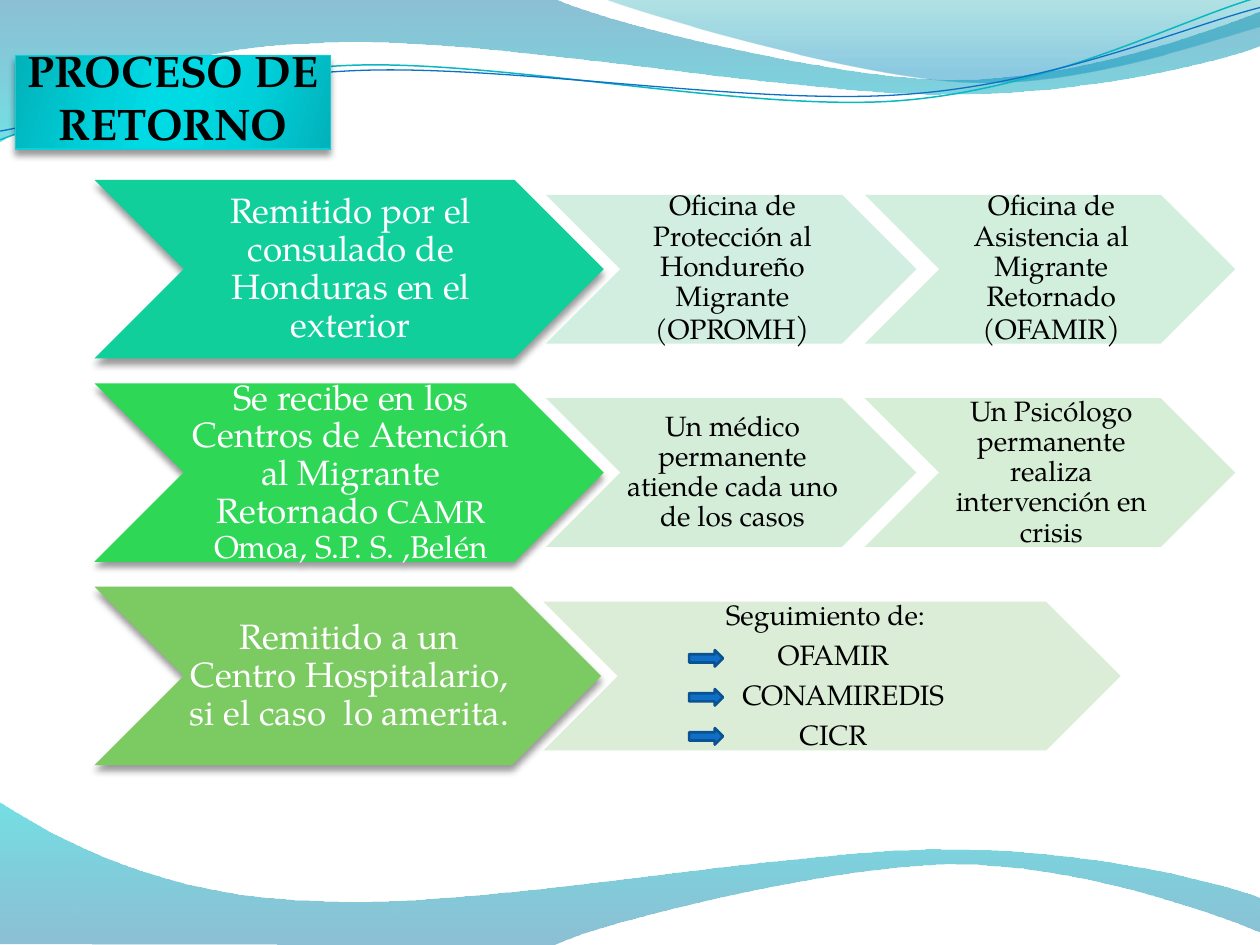
from lxml import etree
from pptx import Presentation
from pptx.dml.color import RGBColor
from pptx.enum import shapes, text
from pptx.oxml import ns
from pptx.util import Pt

FONT = "TeX Gyre Pagella"
COLORS = {
    "white": "FFFFFF", "black": "000000",
    "deep": "0074A1", "aqua": "00C6CF", "teal": "00A1A9", "sky": "008BBF",
    "thin_teal": "0AB8BF", "thin_blue": "0F6FC6", "arrow_edge": "0B5292",
    "title_edge": "0BD0D9", "title_dark": "01B2BA", "title_mid": "00D0DA", "title_light": "00DAE4",
    "mint": "10CF9B", "green": "2FD757", "olive": "7CCA62",
    "mint_1": "CCEDDE", "mint_2": "CEEDD9",
    "green_1": "D0ECD5", "green_2": "D2ECD2", "olive_1": "D8ECD3",
}
WIDTH, HEIGHT = 720, 540
MIRROR = 539.3
LEAD_HEIGHT, STEP_HEIGHT, ROW_PITCH = 102, 85, 116.25
LEAD_OVERLAP, STEP_OVERLAP = 33, 29.5

# Outlines in points: a pair is a straight segment, six numbers are a cubic curve.
WAVE = [(0, 0), (316.8, -0.7), (342.7, 12.2, 478.1, 45.4, 545.8, 45.4),
        (614.2, 45.4, 689.8, 18.7, 720, 6.5), (720.7, 25.9),
        (707.8, 31.7, 626.4, 54.7, 537.1, 54), (447.8, 54, 275, 20.2, 185, 24.5),
        (92.9, 25.9, 33.1, 59.8, -0.7, 81.4)]
CREST = [(344.9, -0.7), (366.5, 7.9, 491, 44.6, 553.7, 46.8),
         (616.3, 49.7, 691.9, 23, 720, 15.1), (720, 0)]
TEAL_LINE = [(0, 79.9), (34.6, 67, 113.8, 41, 199.4, 37.4),
             (284.4, 33.8, 427, 64.1, 513.4, 57.6), (599.8, 51.1, 675.4, 10.8, 718.6, -1.4)]
BLUE_LINE = [(0, 74.9), (33.8, 69.1, 118.1, 43.9, 203.8, 40.3),
             (290.2, 36.7, 429.8, 60.5, 516.2, 54), (601.9, 48.2, 677.5, 15.1, 720, 4.3)]

# Each row: widths of lead and steps, then (colour, paragraphs of (words, size) spans).
ROWS = [
    (291, 211.7, [
        ("mint", [[("Remitido por el consulado de Honduras en el exterior", 20)]]),
        ("mint_1", [[("Oficina de Protección al Hondureño Migrante (OPROMH", 16), (")", 18)]]),
        ("mint_2", [[("Oficina de Asistencia al Migrante Retornado (OFAMIR", 16), (")", 18)]])]),
    (291, 211.7, [
        ("green", [[("Se recibe en los Centros de Atención al Migrante Retornado ", 20),
                    ("CAMR Omoa, S.P. S. ,Belén", 18)]]),
        ("green_1", [[("Un médico permanente atiende cada uno de los casos", 16)]]),
        ("green_2", [[("Un Psicólogo permanente realiza intervención en crisis", 16)]])]),
    (289.5, 329.8, [
        ("olive", [[("Remitido a un Centro Hospitalario, si el caso  lo amerita.", 20)]]),
        ("olive_1", [[(words, 16)] for words in
                     ("Seguimiento de:", "OFAMIR", "CONAMIREDIS", "CICR")])]),
]


def rgb(name):
    return RGBColor.from_string(COLORS[name])


def apply(target, **values):
    for name, value in values.items():
        setattr(target, name, value)


def add_node(parent, tag, **attributes):
    node = etree.SubElement(parent, ns.qn(tag))
    for name, value in attributes.items():
        node.set(name, str(value))
    return node


def add_color(parent, name, alpha=100):
    color = add_node(parent, "a:srgbClr", val=COLORS[name])
    if alpha < 100:
        add_node(color, "a:alpha", val=alpha * 1000)


def set_solid(shape, name, alpha=100):
    shape.fill.solid()
    shape.fill.fore_color.rgb = rgb(name)
    if alpha < 100:
        color = shape.element.spPr.find(ns.qn("a:solidFill"))[0]
        add_node(color, "a:alpha", val=alpha * 1000)


def set_gradient(shape, stops, angle):
    """Fill with (position, colour, opacity) stops at a clockwise angle."""
    shape.fill.gradient()
    fill = shape.element.spPr.find(ns.qn("a:gradFill"))
    for child in list(fill):
        fill.remove(child)
    stop_list = add_node(fill, "a:gsLst")
    for position, name, alpha in stops:
        add_color(add_node(stop_list, "a:gs", pos=position * 1000), name, alpha)
    add_node(fill, "a:lin", ang=angle * 60000, scaled=0)


def set_line(shape, name, width):
    shape.line.color.rgb = rgb(name)
    shape.line.width = Pt(width)


def add_shadow(shape):
    shape.shadow.inherit = False
    effects = shape.element.spPr.find(ns.qn("a:effectLst"))
    shadow = add_node(effects, "a:outerShdw", blurRad=Pt(4), dist=Pt(3.3), dir=5400000, rotWithShape=0)
    add_color(shadow, "black", 40)


def add_shape(page, kind, left, top, width, height):
    shape = page.shapes.add_shape(kind, Pt(left), Pt(top), Pt(width), Pt(height))
    shape.shadow.inherit = False
    return shape


def add_outline(page, outline, closed, mirrored=False):
    """Build a freeform through every point, then join the control points into curves."""
    points = [(Pt(x), Pt(MIRROR - y if mirrored else y))
              for segment in outline for x, y in zip(segment[::2], segment[1::2])]
    builder = page.shapes.build_freeform(*points[0], scale=1.0)
    builder.add_line_segments(points[1:], close=closed)
    shape = builder.convert_to_shape()
    lines = iter(list(shape.element.iter(ns.qn("a:lnTo"))))
    for segment in outline[1:]:
        first = next(lines)
        if len(segment) == 6:
            curve = etree.Element(ns.qn("a:cubicBezTo"))
            first.addprevious(curve)
            for line in (first, next(lines), next(lines)):
                curve.append(line[0])
                line.getparent().remove(line)
    shape.shadow.inherit = False
    (shape.line if closed else shape).fill.background()
    return shape


def draw_waves(page):
    wave_stops = [(0, "deep", 45), (100, "aqua", 55)]
    set_gradient(add_outline(page, WAVE, True), wave_stops, 90)
    set_gradient(add_outline(page, CREST, True), [(0, "teal", 30), (80, "sky", 45)], 90)
    set_line(add_outline(page, TEAL_LINE, False), "thin_teal", 0.85)
    set_line(add_outline(page, BLUE_LINE, False), "thin_blue", 0.75)
    set_gradient(add_outline(page, WAVE, True, mirrored=True), wave_stops, 270)


def write(shape, paragraphs, color, anchor, margins, spacing=1.0, after=0, bold=False):
    frame = shape.text_frame
    left, top, right, bottom = map(Pt, margins)
    apply(frame, word_wrap=True, auto_size=text.MSO_AUTO_SIZE.NONE, vertical_anchor=anchor,
          margin_left=left, margin_top=top, margin_right=right, margin_bottom=bottom)
    for index, spans in enumerate(paragraphs):
        para = frame.add_paragraph() if index else frame.paragraphs[0]
        apply(para, alignment=text.PP_ALIGN.CENTER, line_spacing=spacing,
              space_before=Pt(0), space_after=Pt(after))
        for words, size in spans:
            span = para.add_run()
            span.text = words
            apply(span.font, name=FONT, size=Pt(size), bold=bold)
            span.font.color.rgb = rgb(color)


def draw_title(page, left, top, width, height):
    title = page.shapes.title
    title.element.getparent().append(title.element)
    apply(title, left=Pt(left), top=Pt(top), width=Pt(width), height=Pt(height))
    stops = [(0, "title_dark"), (30, "title_mid"), (45, "title_light"),
             (55, "title_light"), (73, "title_mid"), (100, "title_dark")]
    set_gradient(title, [(*stop, 100) for stop in stops], 16)
    set_line(title, "title_edge", 0.75)
    add_shadow(title)
    write(title, [[("PROCESO DE RETORNO", 25.2)]], "black", text.MSO_ANCHOR.BOTTOM, (0, 0, 0, 0), bold=True)


def draw_row(page, left, top, lead_width, step_width, parts):
    """Draw a strong lead chevron and its pale steps; return the last one."""
    for index, (color, paragraphs) in enumerate(parts):
        lead = index == 0
        width, height = (lead_width, LEAD_HEIGHT) if lead else (step_width, STEP_HEIGHT)
        chevron = add_shape(page, shapes.MSO_SHAPE.CHEVRON, left,
                            top + (LEAD_HEIGHT - height) / 2, width, height)
        set_solid(chevron, color, 100 if lead else 90)
        chevron.line.fill.background()
        if lead:
            add_shadow(chevron)
        write(chevron, paragraphs, "white" if lead else "black", text.MSO_ANCHOR.MIDDLE,
              (2 if lead else 1.5, 1, 0, 1), 0.9, 0.35 * paragraphs[0][0][1])
        left += width - (LEAD_OVERLAP if lead else STEP_OVERLAP)
    return chevron


def draw_follow_up(page, chevron, left, top):
    """Indent the list of bodies under its heading and mark each with an arrow."""
    chevron.text_frame.margin_right = Pt(9)
    for index, (para, indent) in enumerate(zip(chevron.text_frame.paragraphs[1:], (9, 20.5, 9))):
        para._p.get_or_add_pPr().set("marL", str(Pt(indent)))
        arrow = add_shape(page, shapes.MSO_SHAPE.RIGHT_ARROW, left, top + index * 22.3, 19.4, 9.4)
        set_solid(arrow, "thin_blue")
        set_line(arrow, "arrow_edge", 1.5)


def main():
    deck = Presentation()
    apply(deck, slide_width=Pt(WIDTH), slide_height=Pt(HEIGHT))
    page = deck.slides.add_slide(deck.slide_layouts[5])
    draw_waves(page)
    for index, (lead_width, step_width, parts) in enumerate(ROWS):
        last = draw_row(page, 54, 102.8 + index * ROW_PITCH, lead_width, step_width, parts)
    draw_follow_up(page, last, 393.8, 371.5)
    draw_title(page, 8.8, 31.9, 180, 53.3)
    deck.save("out.pptx")


if __name__ == "__main__":
    main()
